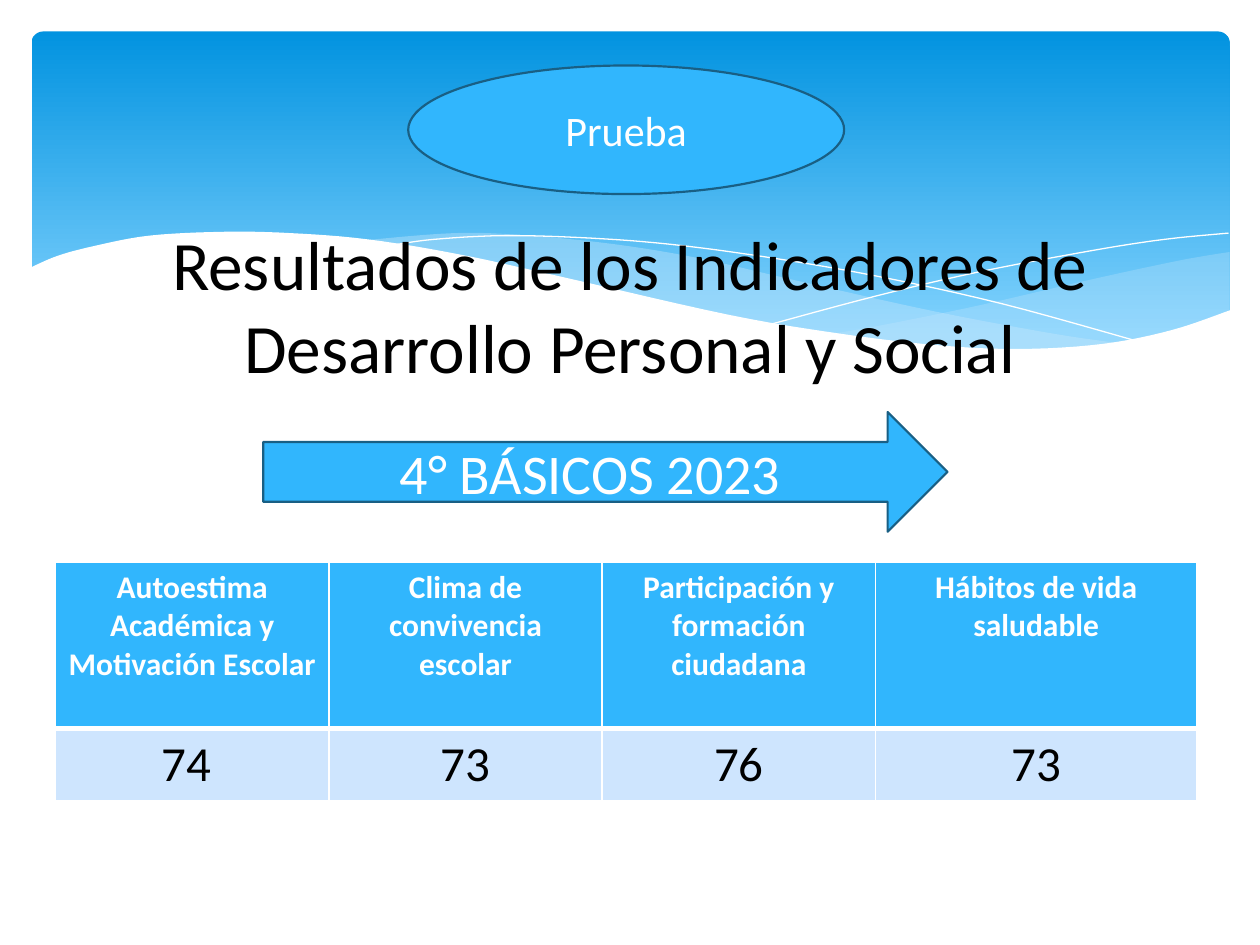
from lxml import etree
from pptx import Presentation
from pptx.dml.color import RGBColor
from pptx.enum.shapes import MSO_SHAPE
from pptx.enum.text import MSO_ANCHOR, PP_ALIGN
from pptx.oxml.ns import qn
from pptx.util import Inches, Pt

ROUNDED, ARROW, OVAL = MSO_SHAPE.ROUNDED_RECTANGLE, MSO_SHAPE.RIGHT_ARROW, MSO_SHAPE.OVAL
CENTER, MIDDLE = PP_ALIGN.CENTER, MSO_ANCHOR.MIDDLE
TITLE_ONLY = 5
FONT = "Calibri"
COLORS = {
    "sky_top": "0293E0", "sky_bottom": "83D3FE", "wave": "C6E7FC", "white": "FFFFFF",
    "accent": "31B6FD", "outline": "195F84", "band": "CEE5FE", "black": "000000",
}

RIGHT_WAVE_TOP = [(9.76, 2), (9.35, 2.07), (8.61, 2.23), (7.79, 2.42), (7.06, 2.57), (6.61, 2.65)]
RIGHT_WAVE_BOTTOM = [(6.61, 2.65), (7.19, 2.72), (7.69, 2.77), (8.14, 2.78), (8.63, 2.75),
                     (9.05, 2.69), (9.42, 2.59), (9.76, 2.47)]
LONG_WAVE_TOP = [(8.93, 2.73), (8.37, 2.65), (7.41, 2.47), (6.29, 2.22), (5.55, 2.05),
                 (4.89, 1.94), (4.2, 1.87), (3.61, 1.85), (2.86, 1.91)]
LONG_WAVE_BOTTOM = [(2.86, 1.91), (3.62, 2.03), (4.49, 2.22), (5.66, 2.48), (6.5, 2.64),
                    (7.22, 2.74), (7.85, 2.78), (8.38, 2.78), (8.93, 2.73)]
FALLING_LINE = [(3.09, 1.95), (3.44, 1.9), (4.01, 1.87), (4.69, 1.89), (5.33, 1.94),
                (6.08, 2.04), (6.95, 2.19), (7.95, 2.41), (9.07, 2.72)]
RISING_LINE = [(6.13, 2.57), (6.95, 2.35), (7.76, 2.16), (8.66, 1.99), (9.24, 1.9), (9.75, 1.85)]
WHITE_EDGE = [(9.77, 2.46), (9.3, 2.62), (8.75, 2.73), (8.09, 2.77), (7.44, 2.74), (6.68, 2.65),
              (5.79, 2.5), (4.47, 2.2), (3.65, 2.02), (2.92, 1.9), (2.3, 1.85), (1.77, 1.84),
              (1.19, 1.87), (0.76, 1.95), (0.46, 2.03), (0.23, 2.13)]
WHITE_BASE = [(0.23, 3.29), (9.77, 3.29)]

HEADERS = ["Autoestima Académica y Motivación Escolar", "Clima de\vconvivencia escolar",
           "Participación y\vformación ciudadana", "Hábitos de vida\vsaludable"]
SCORES = ["74 ", "73", "76", "73"]
COLUMN_WIDTHS = [2.17, 2.17, 2.17, 2.55]
ROW_HEIGHTS = [1.32, 0.55]


def color(name):
    return RGBColor.from_string(COLORS[name])


def paint(fill, name):
    fill.solid()
    fill.fore_color.rgb = color(name)


def write(text_frame, text, size, color_name, bold=False):
    text_frame.text = text
    paragraph = text_frame.paragraphs[0]
    paragraph.alignment = CENTER
    for run in paragraph.runs:
        run.font.name = FONT
        run.font.size = Pt(size)
        run.font.bold = bold
        run.font.color.rgb = color(color_name)


def smooth_curve(points, steps=6):
    """Return points along a Catmull-Rom curve through the given ones."""
    padded = [points[0], *points, points[-1]]
    curve = [points[0]]
    for a, b, c, d in zip(padded, padded[1:], padded[2:], padded[3:]):
        for step in range(1, steps + 1):
            t = step / steps
            curve.append(tuple(
                0.5 * (2 * q + (r - p) * t + (2 * p - 5 * q + 4 * r - s) * t ** 2
                       + (3 * q - p - 3 * r + s) * t ** 3)
                for p, q, r, s in zip(a, b, c, d)))
    return curve


def add_outline(slide, points, close):
    emu_points = [(Inches(x), Inches(y)) for x, y in points]
    builder = slide.shapes.build_freeform(*emu_points[0])
    builder.add_line_segments(emu_points[1:], close=close)
    shape = builder.convert_to_shape()
    shape.shadow.inherit = False
    return shape


def add_wave(slide, points, color_name, opacity=100):
    shape = add_outline(slide, points, True)
    paint(shape.fill, color_name)
    shape.line.fill.background()
    if opacity < 100:
        rgb = shape.element.spPr.find(qn("a:solidFill")).find(qn("a:srgbClr"))
        etree.SubElement(rgb, qn("a:alpha"), val=str(opacity * 1000))


def add_hairline(slide, points):
    shape = add_outline(slide, smooth_curve(points), False)
    shape.fill.background()
    shape.line.color.rgb = color("white")
    shape.line.width = Pt(0)


def add_sky(slide):
    sky = slide.shapes.add_shape(ROUNDED, Inches(0.25), Inches(0.25), Inches(9.51), Inches(2.7))
    sky.adjustments[0] = 0.034
    sky.shadow.inherit = False
    sky.line.fill.background()
    sky.fill.gradient()
    sky.fill.gradient_angle = 270
    stops = zip(sky.fill.gradient_stops, ("sky_top", "sky_bottom"), (0, 0.9))
    for stop, name, position in stops:
        stop.color.rgb = color(name)
        stop.position = position


def add_background(slide):
    add_sky(slide)
    add_wave(slide, smooth_curve(RIGHT_WAVE_TOP) + smooth_curve(RIGHT_WAVE_BOTTOM), "wave", 29)
    add_wave(slide, smooth_curve(LONG_WAVE_TOP) + smooth_curve(LONG_WAVE_BOTTOM), "wave", 40)
    add_hairline(slide, FALLING_LINE)
    add_hairline(slide, RISING_LINE)
    add_wave(slide, smooth_curve(WHITE_EDGE) + WHITE_BASE, "white")


def set_borders(cell, widths):
    """Draw white borders; widths are points for left, right, top and bottom."""
    properties = cell._tc.get_or_add_tcPr()
    for side, width in zip("LRTB", widths):
        line = etree.SubElement(properties, qn(f"a:ln{side}"), w=str(Pt(width)))
        fill = etree.SubElement(line, qn("a:solidFill"))
        etree.SubElement(fill, qn("a:srgbClr"), val=COLORS["white"])


def add_results_table(slide):
    table = slide.shapes.add_table(
        2, len(HEADERS), Inches(0.44), Inches(4.46),
        Inches(sum(COLUMN_WIDTHS)), Inches(sum(ROW_HEIGHTS))).table
    for column, width in zip(table.columns, COLUMN_WIDTHS):
        column.width = Inches(width)
    for row, height in zip(table.rows, ROW_HEIGHTS):
        row.height = Inches(height)
    row_styles = [
        (HEADERS, 18, "white", True, "accent", (1, 1, 1, 3)),
        (SCORES, 28, "black", False, "band", (1, 1, 3, 1)),
    ]
    for row, (texts, size, text_color, bold, fill, borders) in zip(table.rows, row_styles):
        for cell, text in zip(row.cells, texts):
            write(cell.text_frame, text, size, text_color, bold)
            set_borders(cell, borders)
            paint(cell.fill, fill)


def add_title(slide):
    title = slide.shapes.title
    title.left, title.top = Inches(0.5), Inches(1.55)
    title.width, title.height = Inches(9), Inches(1.73)
    title.text_frame.vertical_anchor = MIDDLE
    write(title.text_frame, "Resultados de los Indicadores de Desarrollo Personal y Social",
          39.6, "black")
    title.element.getparent().append(title.element)  # in front of the waves


def add_label(slide, kind, box, text, size):
    shape = slide.shapes.add_shape(kind, *map(Inches, box))
    shape.shadow.inherit = False
    paint(shape.fill, "accent")
    shape.line.color.rgb = color("outline")
    shape.line.width = Pt(1.25)
    shape.text_frame.vertical_anchor = MIDDLE
    write(shape.text_frame, text, size, "white")


def main():
    presentation = Presentation()
    presentation.slide_width, presentation.slide_height = Inches(10), Inches(7.5)
    slide = presentation.slides.add_slide(presentation.slide_layouts[TITLE_ONLY])
    add_background(slide)
    add_results_table(slide)
    add_title(slide)
    add_label(slide, ARROW, (2.09, 3.27, 5.43, 0.95), "4° BÁSICOS 2023", 32)
    add_label(slide, OVAL, (3.24, 0.52, 3.46, 1.02), "Prueba", 24)
    presentation.save("out.pptx")


if __name__ == "__main__":
    main()
